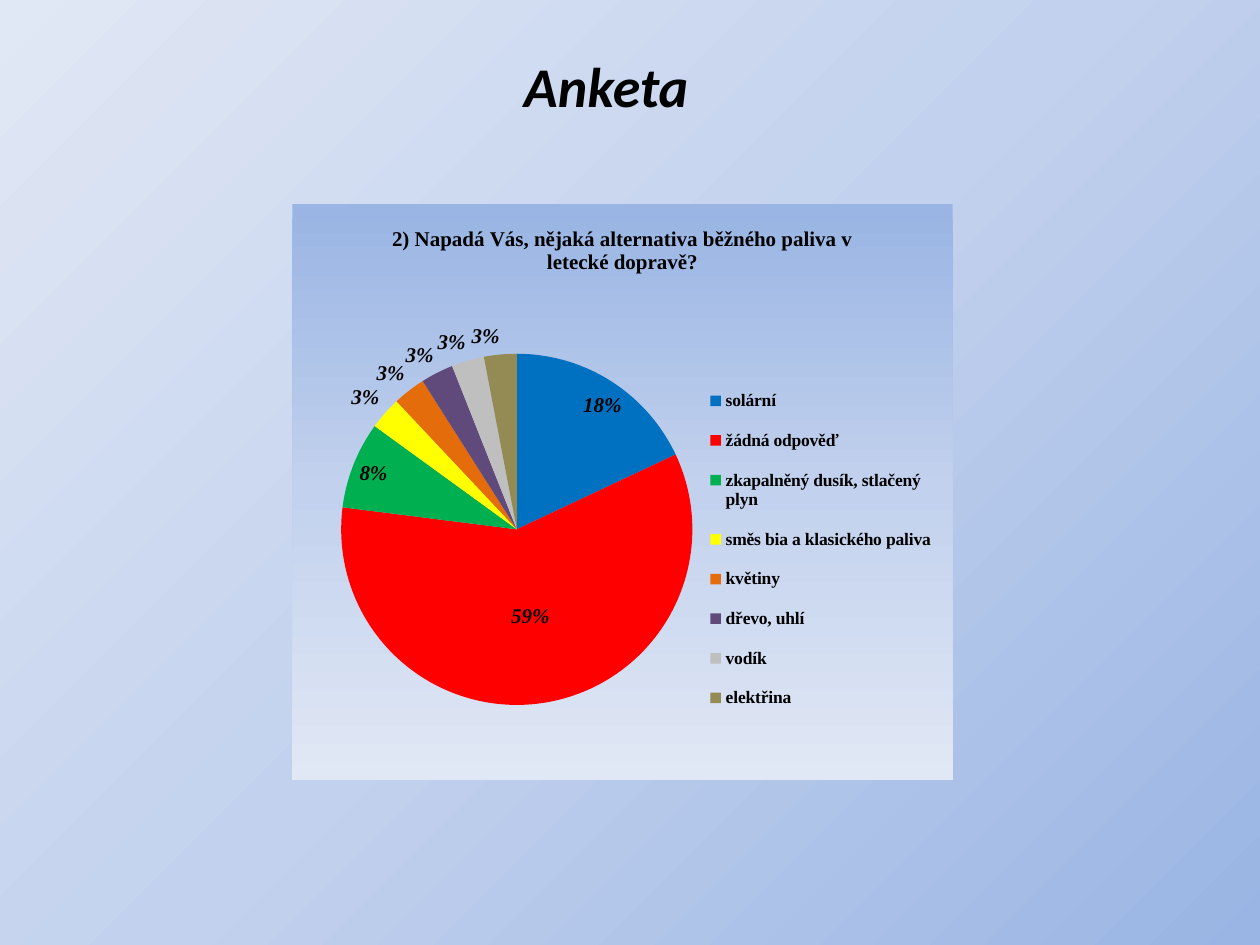
from dataclasses import dataclass
from lxml import etree
from pptx import Presentation
from pptx.chart.data import CategoryChartData
from pptx.dml.color import RGBColor
from pptx.enum.chart import XL_CHART_TYPE, XL_LABEL_POSITION, XL_LEGEND_POSITION
from pptx.enum.text import MSO_AUTO_SIZE
from pptx.oxml.ns import qn
from pptx.util import Inches, Pt


@dataclass(frozen=True)
class Theme:
    ink: str = "000000"
    sans: str = "Calibri"
    serif: str = "Times New Roman"
    head: int = 32
    label: int = 12
    small: int = 10
    fade: tuple = ((0, "9AB5E4"), (50, "C2D1ED"), (100, "E1E8F5"))


# Category, share and slice colour
SHARES = [
    ("solární", 0.18, "0070C0"),
    ("žádná odpověď", 0.59, "FF0000"),
    ("zkapalněný dusík, stlačený plyn", 0.08, "00B050"),
    ("směs bia a klasického paliva", 0.03, "FFFF00"),
    ("květiny", 0.03, "E46C0A"),
    ("dřevo, uhlí", 0.03, "604A7B"),
    ("vodík", 0.03, "BFBFBF"),
    ("elektřina", 0.03, "948A54"),
]


class Deck:
    def __init__(self, theme):
        self.theme = theme
        self.file = Presentation()
        self.file.slide_width, self.file.slide_height = Inches(10), Inches(7.5)
        self.slide = self.file.slides.add_slide(self.file.slide_layouts[6])

    def style(self, font, size, face, bold=True, italic=False):
        font.size, font.name = Pt(size), face
        font.bold, font.italic = bold, italic
        font.color.rgb = RGBColor.from_string(self.theme.ink)

    def fade(self, angle):
        grad = etree.Element(qn("a:gradFill"), rotWithShape="1")
        stops = etree.SubElement(grad, qn("a:gsLst"))
        for pos, color in self.theme.fade:
            stop = etree.SubElement(stops, qn("a:gs"), pos=str(pos * 1000))
            etree.SubElement(stop, qn("a:srgbClr"), val=color)
        etree.SubElement(grad, qn("a:lin"), ang=str(angle * 60000), scaled="0")
        return grad

    def back(self, angle):
        self.slide.background.fill.solid()
        props = self.slide.element.find(".//" + qn("p:bgPr"))
        props.replace(props.find(qn("a:solidFill")), self.fade(angle))

    def text(self, words, left, top, width, height):
        box = self.slide.shapes.add_textbox(
            Inches(left), Inches(top), Inches(width), Inches(height))
        frame = box.text_frame
        frame.word_wrap = False
        frame.auto_size = MSO_AUTO_SIZE.SHAPE_TO_FIT_TEXT
        para = frame.paragraphs[0]
        para.text = words
        self.style(para.font, self.theme.head, self.theme.sans, italic=True)

    def place(self, part, inner=False, **box):
        """Set the place of a chart part as shares of the chart area."""
        old = part.find(qn("c:layout"))
        if old is not None:
            part.remove(old)
        layout = etree.Element(qn("c:layout"))
        manual = etree.SubElement(layout, qn("c:manualLayout"))
        if inner:
            etree.SubElement(manual, qn("c:layoutTarget"), val="inner")
        for axis in "xy":
            etree.SubElement(manual, qn(f"c:{axis}Mode"), val="edge")
        for key, value in box.items():
            etree.SubElement(manual, qn(f"c:{key}"), val=str(value))
        if inner:
            part.insert(0, layout)
        else:
            part.find(qn("c:legendPos")).addnext(layout)

    def pie(self, title, rows, left, top, width, height):
        look = self.theme
        data = CategoryChartData(number_format="0%")
        data.categories = [name for name, _, _ in rows]
        data.add_series("Series 1", [share for _, share, _ in rows])
        chart = self.slide.shapes.add_chart(
            XL_CHART_TYPE.PIE, Inches(left), Inches(top),
            Inches(width), Inches(height), data).chart
        self.style(chart.font, look.small, look.sans, bold=False)

        # Chart area
        area = etree.Element(qn("c:spPr"))
        area.append(self.fade(90))
        line = etree.SubElement(area, qn("a:ln"))
        etree.SubElement(line, qn("a:noFill"))
        space = chart.element
        space.find(qn("c:chart")).addnext(area)

        # Title
        chart.has_title = True
        para = chart.chart_title.text_frame.paragraphs[0]
        para.text = title
        self.style(para.font, look.label, look.serif)
        chart.chart_title.include_in_layout = False

        # Legend
        chart.has_legend = True
        legend = chart.legend
        legend.position = XL_LEGEND_POSITION.RIGHT
        legend.include_in_layout = False
        self.style(legend.font, look.small, look.serif)
        self.place(space.find(".//" + qn("c:legend")), x=0.62, y=0.29, w=0.36, h=0.62)

        # Slices
        plot = chart.plots[0]
        plot.vary_by_categories = True
        series = plot.series[0]
        for spot, (_, _, color) in enumerate(rows):
            fill = series.points[spot].format.fill
            fill.solid()
            fill.fore_color.rgb = RGBColor.from_string(color)
        self.place(space.find(".//" + qn("c:plotArea")), inner=True,
                   x=0.07, y=0.26, w=0.54, h=0.61)

        # Labels, with the largest share centred in its slice
        labels = series.data_labels
        labels.show_value = True
        labels.number_format, labels.number_format_is_linked = "0%", False
        labels.position = XL_LABEL_POSITION.BEST_FIT
        top_label = series.points[1].data_label
        top_label.position = XL_LABEL_POSITION.CENTER
        for font in (labels.font, top_label.font):
            self.style(font, look.label, look.serif, italic=True)


def main():
    deck = Deck(Theme())
    deck.back(225)
    deck.text("Anketa", 4.06, 0.36, 1.52, 0.64)
    deck.pie("2) Napadá Vás, nějaká alternativa běžného paliva v letecké dopravě?",
             SHARES, 2.32, 1.62, 5.24, 4.57)
    deck.file.save("out.pptx")


if __name__ == "__main__":
    main()
